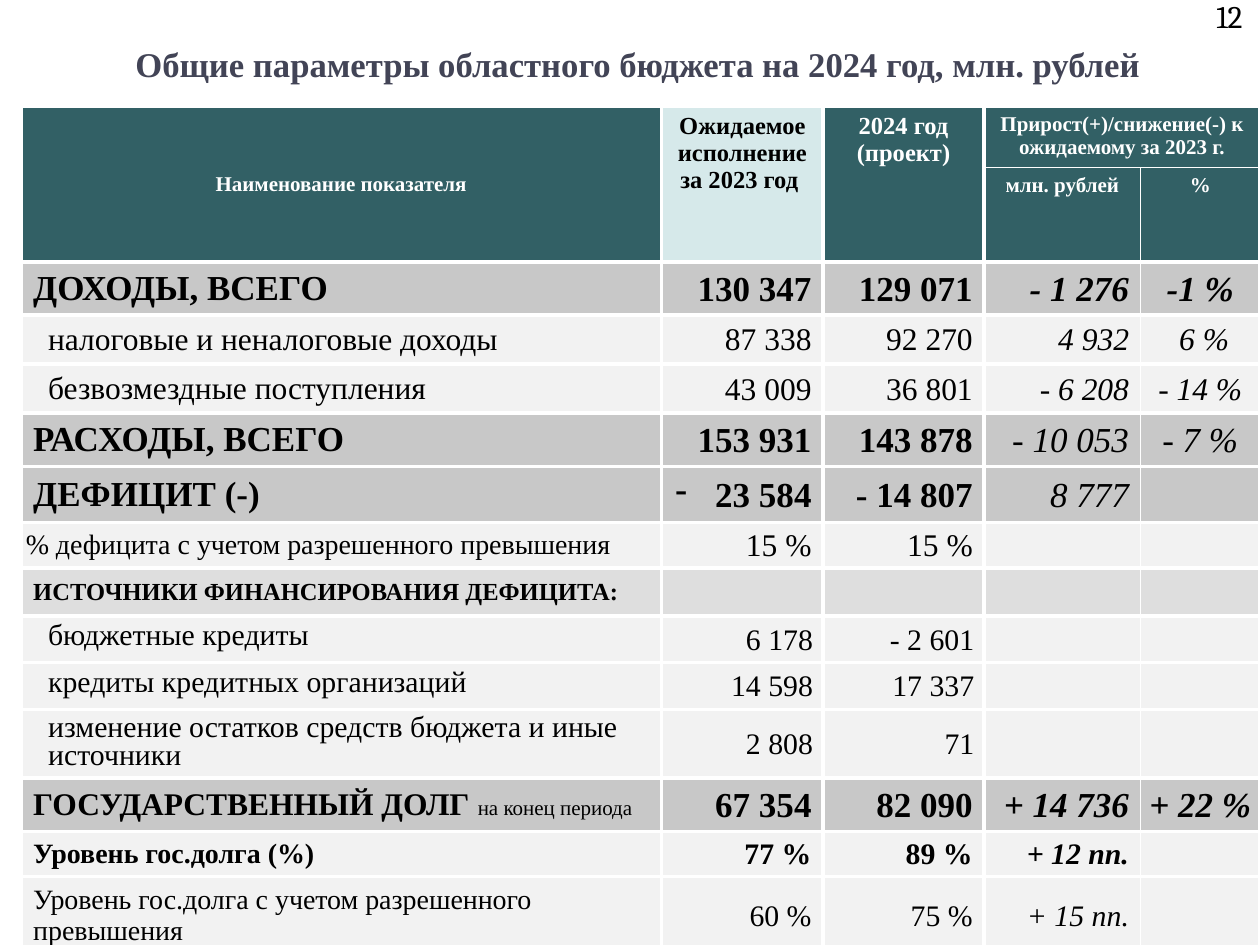
from dataclasses import dataclass

from lxml import etree
from pptx import Presentation
from pptx import util as u
from pptx.dml.color import RGBColor
from pptx.enum import text
from pptx.oxml.ns import qn

WHITE = RGBColor(0xFF, 0xFF, 0xFF)
BLACK = RGBColor(0, 0, 0)
TITLE = RGBColor(0x42, 0x44, 0x56)
TEAL = RGBColor(0x32, 0x60, 0x65)
PALE = RGBColor(0xD6, 0xE9, 0xEA)
TOTAL = RGBColor(0xC8, 0xC8, 0xC8)
SECTION = RGBColor(0xDE, 0xDE, 0xDE)
DETAIL = RGBColor(0xF2, 0xF2, 0xF2)

LEFT, CENTER, RIGHT = (text.PP_ALIGN.LEFT, text.PP_ALIGN.CENTER,
                       text.PP_ALIGN.RIGHT)
TOP, MIDDLE, BOTTOM = (text.MSO_ANCHOR.TOP, text.MSO_ANCHOR.MIDDLE,
                       text.MSO_ANCHOR.BOTTOM)
LABEL_INSETS = (0.25, 0.13, 0.25, 0.13)
VALUE_INSETS = (0.03, 0.03, 0.23, 0)
SHARE_INSETS = (0.03, 0.03, 0.03, 0)

COLUMNS = (12.92, 3.25, 3.25, 3.15, 2.41)
HEADER_HEIGHTS = (1.24, 1.85)


@dataclass
class Row:
    height: float
    fill: RGBColor
    label: str
    size: float
    values: tuple = ()          # 2023, 2024, change, change in %
    value_size: float = 18
    bold: bool = False
    change_bold: bool = False
    indent: float = 0
    spacing: float = 0
    note: str = ""
    insets: tuple = LABEL_INSETS
    value_insets: tuple = VALUE_INSETS
    dash: bool = False          # the first value carries a dash bullet


FUNDING = dict(indent=0.3, value_size=17, value_insets=(0.03, 0.03, 0.2, 0))
ROWS = (
    Row(1.07, TOTAL, "ДОХОДЫ, ВСЕГО", 20,
        ("130 347", "129 071", "- 1 276", "-1 %"), 20, True, True),
    Row(0.99, DETAIL, "налоговые и неналоговые доходы", 18,
        ("87 338", "92 270", "4 932", " 6 %"), indent=0.3),
    Row(0.99, DETAIL, "безвозмездные поступления", 18,
        ("43 009", "36 801", "- 6 208", "- 14 %"), indent=0.3),
    Row(1.07, TOTAL, "РАСХОДЫ, ВСЕГО", 20,
        ("153 931", "143 878", "- 10 053", "- 7 %"), 20, True),
    Row(1.14, TOTAL, "ДЕФИЦИТ (-)", 20,
        ("23 584", "- 14 807", "8 777"), 20, True, dash=True),
    Row(0.91, DETAIL, "% дефицита с учетом разрешенного превышения", 16,
        ("15 %", "15 %"), insets=(0.1, 0.13, 0.25, 0.13)),
    Row(0.97, SECTION, "ИСТОЧНИКИ ФИНАНСИРОВАНИЯ ДЕФИЦИТА:", 14, bold=True),
    Row(0.94, DETAIL, "бюджетные кредиты", 17,
        ("6 178", "- 2 601"), spacing=15, **FUNDING),
    Row(0.94, DETAIL, "кредиты кредитных организаций", 17,
        ("14 598", "17 337"), spacing=15, **FUNDING),
    Row(1.35, DETAIL, "изменение остатков средств бюджета и иные источники", 17,
        ("2 808", "71"), spacing=16, **FUNDING),
    Row(1.07, TOTAL, "ГОСУДАРСТВЕННЫЙ ДОЛГ ", 18,
        ("67 354", "82 090", "+ 14 736", "+ 22 %"), 20, True, True,
        note="на конец периода"),
    Row(0.91, DETAIL, "Уровень гос.долга (%)", 16,
        ("77 %", "89 %", "+ 12 пп."), 17, True, True),
    Row(1.57, DETAIL, "Уровень гос.долга с учетом разрешенного превышения", 16,
        ("60 %", "75 %", "+ 15 пп."), 17),
)


class Deck:
    font = "Times New Roman"

    def __init__(self):
        self.prs = Presentation()
        self.prs.slide_width, self.prs.slide_height = u.Cm(25.4), u.Cm(19.05)
        self.s = self.prs.slides.add_slide(self.prs.slide_layouts[5])

    def run(self, p, words, size, color=BLACK, bold=False, italic=False, font=None):
        r = p.add_run()
        r.text = words
        f = r.font
        f.name, f.size, f.bold, f.italic = font or self.font, u.Pt(size), bold, italic
        f.color.rgb = color

    def place(self, sp, box, anchor, insets):
        sp.left, sp.top, sp.width, sp.height = map(u.Cm, box)
        tf = sp.text_frame
        tf.word_wrap, tf.vertical_anchor = True, anchor
        tf.auto_size = text.MSO_AUTO_SIZE.NONE
        (tf.margin_left, tf.margin_top,
         tf.margin_right, tf.margin_bottom) = map(u.Cm, insets)
        return tf.paragraphs[0]

    def title(self, words, box):
        p = self.place(self.s.shapes.title, box, MIDDLE, (0.2, 0.1, 0.3, 0.62))
        p.alignment = CENTER
        self.run(p, words, 19.8, TITLE, bold=True)

    def page_number(self, words, box):
        sp = self.s.shapes.add_textbox(*map(u.Cm, box))
        p = self.place(sp, box, BOTTOM, LABEL_INSETS)
        p.alignment = RIGHT
        self.run(p, words, 18, font="Cambria")

    def table(self, left, top, widths, heights):
        table = self.s.shapes.add_table(
            len(heights), len(widths), u.Cm(left), u.Cm(top),
            u.Cm(sum(widths)), u.Cm(sum(heights))).table
        table.first_row = table.horz_banding = False
        for column, width in zip(table.columns, widths):
            column.width = u.Cm(width)
        for row, height in zip(table.rows, heights):
            row.height = u.Cm(height)
        return table

    def borders(self, cell, thin=""):
        """White cell borders; the sides named in thin are hairlines."""
        tc_pr = cell._tc.get_or_add_tcPr()
        for side in "LRTB":
            width = u.Pt(0.25 if side in thin else 2.25)
            ln = etree.SubElement(tc_pr, qn("a:ln" + side), w=str(int(width)))
            fill = etree.SubElement(ln, qn("a:solidFill"))
            etree.SubElement(fill, qn("a:srgbClr"), val=str(WHITE))

    def cell(self, cell, fill, align=LEFT, anchor=MIDDLE, insets=LABEL_INSETS, thin=""):
        self.borders(cell, thin)
        cell.fill.solid()
        cell.fill.fore_color.rgb = fill
        cell.vertical_anchor = anchor
        (cell.margin_left, cell.margin_top,
         cell.margin_right, cell.margin_bottom) = map(u.Cm, insets)
        p = cell.text_frame.paragraphs[0]
        p.alignment = align
        return p

    def dash_bullet(self, p):
        p_pr = p._p.get_or_add_pPr()
        p_pr.set("marL", str(u.Cm(0.8)))
        p_pr.set("indent", str(-u.Cm(0.8)))
        etree.SubElement(p_pr, qn("a:buChar"), char="-")

    def header(self, table):
        heads = (  # row, column, lines, size, fill, colour, anchor
            (0, 0, ["Наименование показателя"], 12, TEAL, WHITE, MIDDLE),
            (0, 1, ["Ожидаемое исполнение за 2023 год "], 14, PALE, BLACK, TOP),
            (0, 2, ["2024 год", "(проект)"], 14, TEAL, WHITE, TOP),
            (0, 3, ["Прирост(+)/снижение(-) к ожидаемому за 2023 г."],
             12, TEAL, WHITE, TOP),
            (1, 3, ["млн. рублей"], 12, TEAL, WHITE, TOP),
            (1, 4, ["%"], 12, TEAL, WHITE, TOP),
        )
        thin = {(0, 3): "B", (1, 3): "TR", (1, 4): "TL"}
        for row, col, lines, size, fill, color, anchor in heads:
            p = self.cell(table.cell(row, col), fill, CENTER, anchor,
                          thin=thin.get((row, col), ""))
            self.run(p, lines[0], size, color, bold=True)
            for line in lines[1:]:
                p = table.cell(row, col).text_frame.add_paragraph()
                p.alignment = CENTER
                self.run(p, line, size, color, bold=True)
        # Merged heads
        for col in range(3):
            self.borders(table.cell(1, col))
            table.cell(0, col).merge(table.cell(1, col))
        self.borders(table.cell(0, 4), "B")
        table.cell(0, 3).merge(table.cell(0, 4))

    def body_row(self, cells, row):
        # Label
        p = self.cell(cells[0], row.fill, insets=row.insets)
        if row.indent:
            p._p.get_or_add_pPr().set("marL", str(u.Cm(row.indent)))
        if row.spacing:
            p.line_spacing = u.Pt(row.spacing)
        self.run(p, row.label, row.size, bold=row.bold)
        if row.note:
            self.run(p, row.note, 12)
        # Values, with the two change columns in italics
        for col in range(1, len(COLUMNS)):
            share, change = col == 4, col >= 3
            p = self.cell(cells[col], row.fill, CENTER if share else RIGHT,
                          insets=SHARE_INSETS if share else row.value_insets,
                          thin={3: "R", 4: "L"}.get(col, ""))
            if col <= len(row.values):
                if row.dash and col == 1:
                    self.dash_bullet(p)
                self.run(p, row.values[col - 1], row.value_size, italic=change,
                         bold=row.change_bold if change else row.bold)


def main():
    deck = Deck()
    deck.title("Общие параметры областного бюджета на 2024 год, млн. рублей",
               (1.4, 0.94, 23, 1.2))

    # Budget table
    heights = HEADER_HEIGHTS + tuple(row.height for row in ROWS)
    table = deck.table(0.42, 2.14, COLUMNS, heights)
    deck.header(table)
    for i, row in enumerate(ROWS, len(HEADER_HEIGHTS)):
        deck.body_row([table.cell(i, col) for col in range(len(COLUMNS))], row)

    deck.page_number("12", (22.3, 0.23, 3, 0.61))
    deck.prs.save("out.pptx")


if __name__ == "__main__":
    main()
